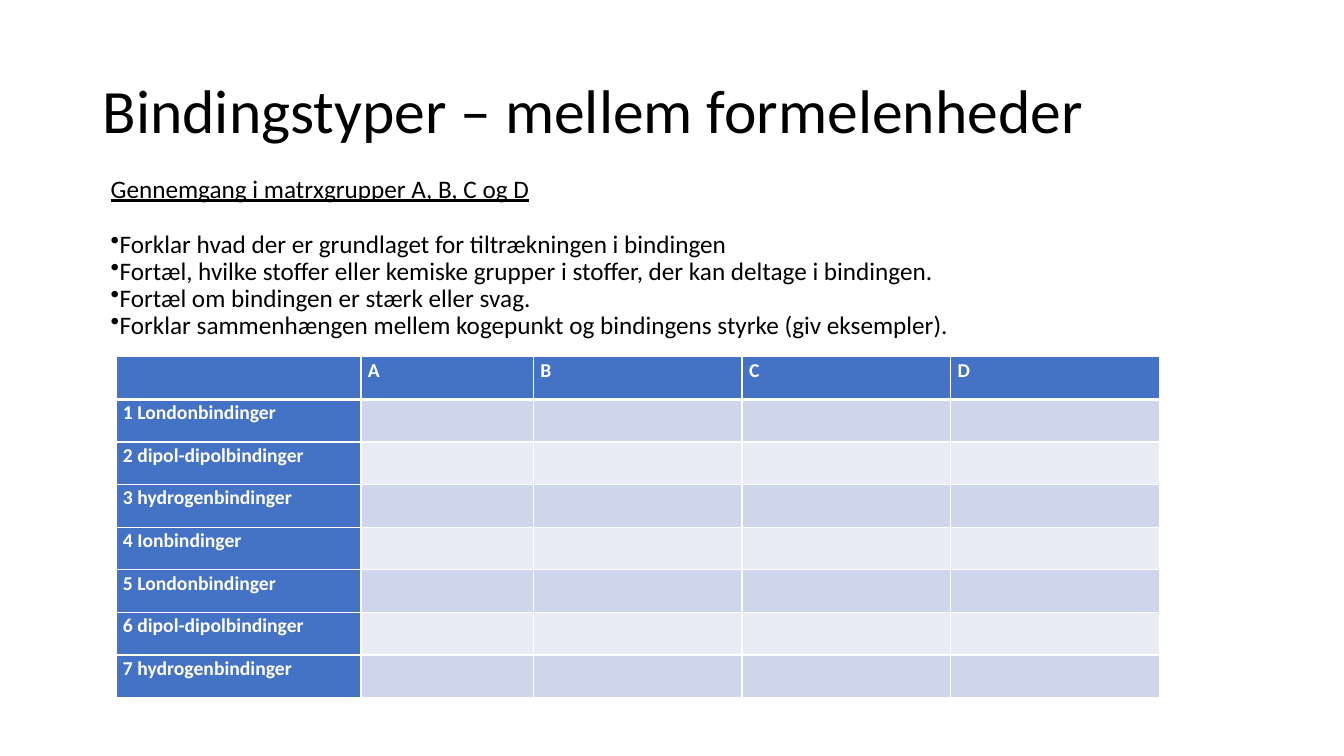
import dataclasses
import typing

import lxml.etree
import pptx
import pptx.dml.color
import pptx.enum.text
import pptx.oxml.ns
import pptx.util

Inches = pptx.util.Inches
Pt = pptx.util.Pt


@dataclasses.dataclass(frozen=True)
class Theme:
    font: str = "Calibri"
    ink: str = "000000"
    white: str = "FFFFFF"
    header: str = "4472C4"
    bands: tuple[str, str] = ("CFD5EA", "E9EBF5")
    title_size: int = 44
    body_size: int = 18
    table_size: int = 14


@dataclasses.dataclass(frozen=True)
class Line:
    text: str
    size: int
    underline: bool = False
    bullet: bool = False
    space_before: float = 0


@dataclasses.dataclass(frozen=True)
class TextBlock:
    left: float
    top: float
    width: float
    height: float
    anchor: pptx.enum.text.MSO_ANCHOR
    lines: tuple[Line, ...]


THEME = Theme()

TITLE = TextBlock(
    0.92, 0.4, 11.5, 1.45, pptx.enum.text.MSO_ANCHOR.MIDDLE,
    (Line("Bindingstyper – mellem formelenheder", THEME.title_size),),
)
TASKS = (
    "Forklar hvad der er grundlaget for tiltrækningen i bindingen",
    "Fortæl, hvilke stoffer eller kemiske grupper i stoffer, der kan deltage i bindingen.",
    "Fortæl om bindingen er stærk eller svag.",
    "Forklar sammenhængen mellem kogepunkt og bindingens styrke (giv eksempler).",
)
INSTRUCTIONS = TextBlock(
    1, 1.7, 11.33, 4.6, pptx.enum.text.MSO_ANCHOR.TOP,
    (
        Line("Gennemgang i matrxgrupper A, B, C og D", THEME.body_size, underline=True),
        *(
            Line(task, THEME.body_size, bullet=True, space_before=0 if number else 19.8)
            for number, task in enumerate(TASKS)
        ),
    ),
)

GROUPS = ("", "A", "B", "C", "D")
BONDS = (
    "1 Londonbindinger",
    "2 dipol-dipolbindinger",
    "3 hydrogenbindinger",
    "4 Ionbindinger",
    "5 Londonbindinger",
    "6 dipol-dipolbindinger",
    "7 hydrogenbindinger",
)
COLUMN_WIDTHS = (2.43, 1.71, 2.07, 2.07, 2.07)
MATRIX_LEFT, MATRIX_TOP, MATRIX_HEIGHT = 1.15, 3.54, 3.38


def rgb(value: str) -> pptx.dml.color.RGBColor:
    return pptx.dml.color.RGBColor.from_string(value)


def apply(target: typing.Any, values: dict[str, typing.Any]) -> None:
    for name, value in values.items():
        setattr(target, name, value)


def style_font(paragraph: typing.Any, size: int, color: str, **extra: bool) -> None:
    for run in paragraph.runs:
        apply(run.font, {"name": THEME.font, "size": Pt(size), **extra})
        run.font.color.rgb = rgb(color)


def add_bullet(paragraph: typing.Any) -> None:
    properties = paragraph._p.get_or_add_pPr()
    properties.set("marL", "0")
    properties.set("indent", str(-Inches(0.25)))
    bullet = lxml.etree.SubElement(properties, pptx.oxml.ns.qn("a:buChar"))
    bullet.set("char", "•")


def draw_text(slide: typing.Any, block: TextBlock) -> None:
    box = slide.shapes.add_textbox(
        *map(Inches, (block.left, block.top, block.width, block.height))
    )
    frame = box.text_frame
    apply(frame, {"word_wrap": True, "vertical_anchor": block.anchor})
    for number, line in enumerate(block.lines):
        paragraph = frame.add_paragraph() if number else frame.paragraphs[0]
        paragraph.text = line.text
        paragraph.line_spacing = 0.9
        if line.space_before:
            paragraph.space_before = Pt(line.space_before)
        if line.bullet:
            add_bullet(paragraph)
        style_font(paragraph, line.size, THEME.ink, underline=line.underline)


def draw_borders(cell: typing.Any, widths: dict[str, float]) -> None:
    properties = cell._tc.get_or_add_tcPr()
    for side, width in widths.items():
        border = lxml.etree.SubElement(properties, pptx.oxml.ns.qn(f"a:ln{side}"))
        border.set("w", str(Pt(width)))
        fill = lxml.etree.SubElement(border, pptx.oxml.ns.qn("a:solidFill"))
        color = lxml.etree.SubElement(fill, pptx.oxml.ns.qn("a:srgbClr"))
        color.set("val", THEME.white)


def draw_cell(cell: typing.Any, text: str, row: int, column: int) -> None:
    apply(cell, {
        "margin_left": Inches(0.07),
        "margin_right": Inches(0.07),
        "margin_top": 0,
        "margin_bottom": 0,
    })
    draw_borders(cell, {
        "L": 1, "R": 1, "T": 3 if row == 1 else 1, "B": 3 if row == 0 else 1,
    })
    is_header = row == 0 or column == 0
    cell.fill.solid()
    cell.fill.fore_color.rgb = rgb(THEME.header if is_header else THEME.bands[(row - 1) % 2])
    if text:
        cell.text = text
        paragraph = cell.text_frame.paragraphs[0]
        apply(paragraph, {"line_spacing": 1.07, "space_after": Pt(8)})
        style_font(paragraph, THEME.table_size, THEME.white, bold=True)


def draw_matrix(slide: typing.Any) -> None:
    rows = [GROUPS] + [(bond,) + ("",) * (len(GROUPS) - 1) for bond in BONDS]
    matrix = slide.shapes.add_table(
        len(rows), len(GROUPS),
        *map(Inches, (MATRIX_LEFT, MATRIX_TOP, sum(COLUMN_WIDTHS), MATRIX_HEIGHT)),
    ).table
    for column, width in zip(matrix.columns, COLUMN_WIDTHS):
        column.width = Inches(width)
    for row, texts in enumerate(rows):
        for column, text in enumerate(texts):
            draw_cell(matrix.cell(row, column), text, row, column)


def main() -> None:
    deck = pptx.Presentation()
    apply(deck, {"slide_width": Inches(13.33), "slide_height": Inches(7.5)})
    slide = deck.slides.add_slide(deck.slide_layouts[6])

    # Title and instructions
    for block in (TITLE, INSTRUCTIONS):
        draw_text(slide, block)

    # Bond types against matrix groups
    draw_matrix(slide)

    deck.save("out.pptx")


if __name__ == "__main__":
    main()
